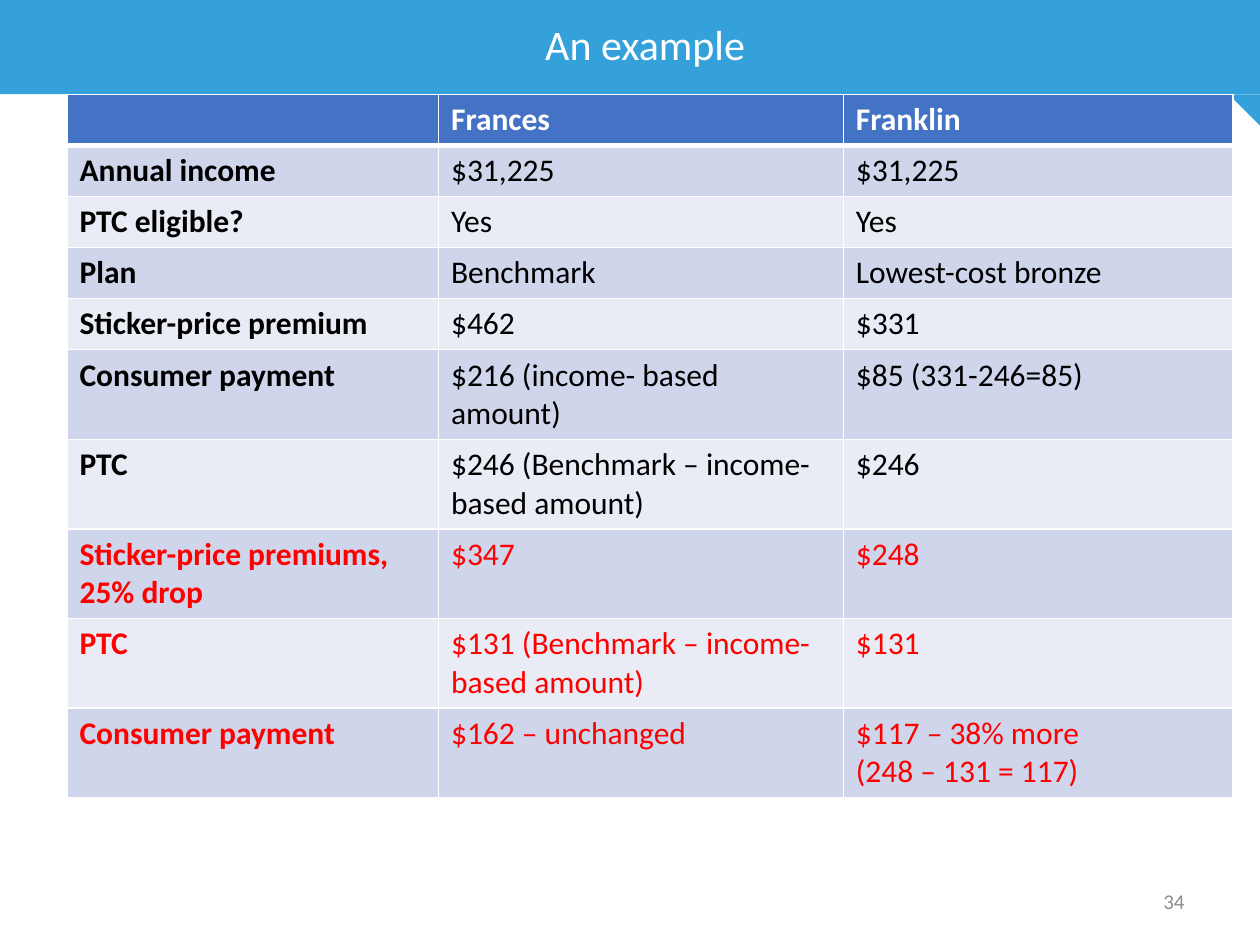
from lxml import etree
from pptx import Presentation
from pptx.dml.color import RGBColor
from pptx.enum.shapes import MSO_SHAPE
from pptx.enum.text import MSO_ANCHOR, PP_ALIGN
from pptx.oxml.ns import qn
from pptx.util import Cm, Pt

RECT, WEDGE = MSO_SHAPE.RECTANGLE, MSO_SHAPE.RIGHT_TRIANGLE
MIDDLE, CENTER, LEFT = MSO_ANCHOR.MIDDLE, PP_ALIGN.CENTER, PP_ALIGN.LEFT

COLORS = {
    "sky": "34A1DA", "head": "4472C4", "dark": "CFD5EA", "light": "E9EBF5",
    "white": "FFFFFF", "black": "000000", "red": "FF0000", "gray": "8C8C8C",
}
PAGE_W, PAGE_H, BAND_H = 25.4, 19.05, 1.9
COLS = (7.49, 8.16, 7.86)
ONE, TWO = 1.03, 1.8  # heights of rows with one and two lines

# Height, text colour, cells
ROWS = [
    (ONE, "white", ("", "Frances", "Franklin")),
    (ONE, "black", ("Annual income", "$31,225", "$31,225")),
    (ONE, "black", ("PTC eligible?", "Yes", "Yes")),
    (ONE, "black", ("Plan", "Benchmark", "Lowest-cost bronze")),
    (ONE, "black", ("Sticker-price premium", "$462", "$331")),
    (TWO, "black", ("Consumer payment", "$216 (income- based amount)",
                    "$85 (331-246=85)")),
    (TWO, "black", ("PTC", "$246 (Benchmark – income-based amount)", "$246")),
    (TWO, "red", ("Sticker-price premiums, 25% drop", "$347", "$248")),
    (TWO, "red", ("PTC", "$131 (Benchmark – income-based amount)", "$131")),
    (TWO, "red", ("Consumer payment", "$162 – unchanged",
                  "$117 – 38% more\n(248 – 131 = 117)")),
]


def rgb(name):
    return RGBColor.from_string(COLORS[name])


def write(frame, text, size, color, align=LEFT, bold=False):
    frame.text = text
    form = {"name": "Calibri", "size": Pt(size), "bold": bold}
    for para in frame.paragraphs:
        para.alignment = align
        for key, value in form.items():
            setattr(para.font, key, value)
        para.font.color.rgb = rgb(color)


def set_box(frame):
    frame.word_wrap = True
    frame.vertical_anchor = MIDDLE


def add_block(slide, kind, box, turn=0):
    shape = slide.shapes.add_shape(kind, *map(Cm, box))
    shape.shadow.inherit = False
    shape.fill.solid()
    shape.fill.fore_color.rgb = rgb("sky")
    shape.line.fill.background()
    shape.rotation = turn


def add_header(slide, left, top, width, height):
    # Band with a folded corner below its right end
    fold = height / 3
    add_block(slide, RECT, (left, top, width, height))
    add_block(slide, WEDGE,
              (left + width - fold, top + height, fold, fold), 180)
    # Title, brought in front of the band
    title = slide.shapes.title
    title.left, title.top = Cm(left + 1.98), Cm(top)
    title.width, title.height = Cm(width - 3.35), Cm(height)
    set_box(title.text_frame)
    write(title.text_frame, "An example", 24, "white", CENTER)
    title.text_frame.paragraphs[0].line_spacing = 0.9
    title.element.getparent().append(title.element)


def set_edges(cell, widths):
    props = cell._tc.get_or_add_tcPr()
    for side, width in widths.items():
        line = etree.SubElement(props, qn(f"a:ln{side}"), w=str(Pt(width)))
        fill = etree.SubElement(line, qn("a:solidFill"))
        etree.SubElement(fill, qn("a:srgbClr"), val=COLORS["white"])


def add_grid(slide, left, top):
    total = sum(row[0] for row in ROWS)
    box = map(Cm, (left, top, sum(COLS), total))
    table = slide.shapes.add_table(len(ROWS), len(COLS), *box).table
    for col, width in zip(table.columns, COLS):
        col.width = Cm(width)
    for r, (height, color, texts) in enumerate(ROWS):
        table.rows[r].height = Cm(height)
        back = "head" if r == 0 else ("light", "dark")[r % 2]
        edges = {"L": 1, "R": 1, "T": 3 if r == 1 else 1,
                 "B": 3 if r == 0 else 1}
        for c, text in enumerate(texts):
            cell = table.cell(r, c)
            set_edges(cell, edges)
            cell.fill.solid()
            cell.fill.fore_color.rgb = rgb(back)
            write(cell.text_frame, text, 18, color, bold=r == 0 or c == 0)


def add_number(slide, *box):
    frame = slide.shapes.add_textbox(*map(Cm, box)).text_frame
    set_box(frame)
    write(frame, "34", 12, "gray", CENTER)


def main():
    deck = Presentation()
    deck.slide_width, deck.slide_height = Cm(PAGE_W), Cm(PAGE_H)
    slide = deck.slides.add_slide(deck.slide_layouts.get_by_name("Title Only"))
    add_header(slide, 0, 0, PAGE_W, BAND_H)
    add_grid(slide, 1.35, BAND_H)
    add_number(slide, 22.94, 17.65, 1.45, 1.02)
    deck.save("out.pptx")


if __name__ == "__main__":
    main()
